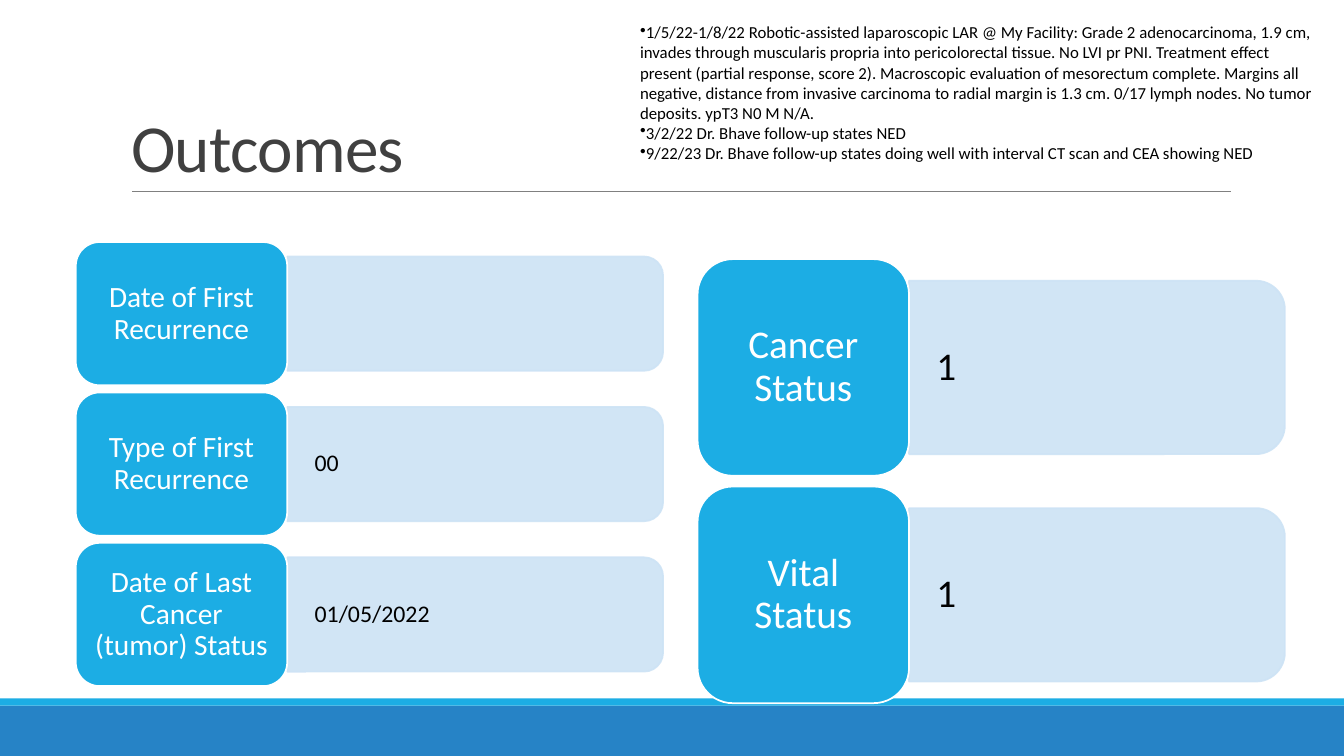
"""Builds the Outcomes slide with recurrence and status cards."""
import lxml.etree
import pptx
import pptx.dml.color
import pptx.enum.shapes
import pptx.enum.text
import pptx.oxml.ns
import pptx.util

Cm = pptx.util.Cm
Pt = pptx.util.Pt
qn = pptx.oxml.ns.qn
SHAPE = pptx.enum.shapes.MSO_SHAPE
ALIGN = pptx.enum.text.PP_ALIGN
ANCHOR = pptx.enum.text.MSO_ANCHOR
AUTO_SIZE = pptx.enum.text.MSO_AUTO_SIZE


def color(hex_string):
    return pptx.dml.color.RGBColor.from_string(hex_string)


def write(para, text, size, ink, spacing=1.0, align=ALIGN.LEFT):
    para.alignment = align
    para.line_spacing = spacing
    span = para.add_run()
    span.text = text
    span.font.size = Pt(size)
    span.font.name = "Calibri"
    span.font.color.rgb = color(ink)
    return span


deck = pptx.Presentation()
deck.slide_width = Cm(33.87)
deck.slide_height = Cm(19.05)
page = deck.slides.add_slide(deck.slide_layouts[5])

for top, height, fill in [(17.78, 1.27, "2683C6"), (17.6, 0.18, "1CADE4")]:
    band = page.shapes.add_shape(SHAPE.RECTANGLE, 0, Cm(top), deck.slide_width, Cm(height))
    band.shadow.inherit = False
    band.fill.solid()
    band.fill.fore_color.rgb = color(fill)
    band.line.fill.background()

rule = page.shapes.add_connector(
    pptx.enum.shapes.MSO_CONNECTOR.STRAIGHT, Cm(3.33), Cm(4.83), Cm(31.01), Cm(4.83))
rule.line.color.rgb = color("808080")
rule.line.width = Pt(0.5)
lxml.etree.SubElement(rule._element.spPr, qn("a:effectLst"))

title = page.shapes.title
title.left, title.top, title.width, title.height = Cm(3.05), Cm(0.79), Cm(27.94), Cm(4.03)
title.text_frame.auto_size = AUTO_SIZE.NONE
title.text_frame.vertical_anchor = ANCHOR.BOTTOM
heading = write(title.text_frame.paragraphs[0], "Outcomes", 48, "404040", 0.85)
heading.font._element.set("spc", "-50")

label_width, bar_length = 5.33, 9.47
columns = [
    {"left": 1.91, "top": 6.1, "height": 3.61, "pitch": 3.79, "bar": 2.88,
     "label_size": 21, "value_size": 17, "inset": 0.22,
     "cards": [("Date of First Recurrence", ""),
               ("Type of First Recurrence", "00"),
               ("Date of Last Cancer (tumor) Status", "01/05/2022")]},
    {"left": 17.58, "top": 6.53, "height": 5.46, "pitch": 5.73, "bar": 4.37,
     "label_size": 28, "value_size": 28, "inset": 0.3,
     "cards": [("Cancer Status", "1"), ("Vital Status", "1")]},
]
for column in columns:
    bar_left = column["left"] + label_width
    thickness = column["bar"]
    for row, (caption, value) in enumerate(column["cards"]):
        top = column["top"] + row * column["pitch"]
        middle = top + column["height"] / 2

        bar = page.shapes.add_shape(
            SHAPE.ROUND_2_SAME_RECTANGLE,
            Cm(bar_left + (bar_length - thickness) / 2), Cm(middle - bar_length / 2),
            Cm(thickness), Cm(bar_length))
        bar.rotation = 90
        bar.shadow.inherit = False
        bar.fill.solid()
        bar.fill.fore_color.rgb = color("CDE3F5")
        bar.line.color.rgb = color("CDE3F5")
        bar.line.width = Pt(1.25)
        for tint in bar._element.spPr.iter(qn("a:srgbClr")):
            lxml.etree.SubElement(tint, qn("a:alpha"), val="90000")

        if value:
            box = page.shapes.add_textbox(
                Cm(bar_left), Cm(middle - thickness / 2), Cm(bar_length), Cm(thickness))
            frame = box.text_frame
            frame.word_wrap = True
            frame.vertical_anchor = ANCHOR.MIDDLE
            frame.margin_left = frame.margin_right = Cm(0.69)
            write(frame.paragraphs[0], value, column["value_size"], "000000", 0.9)

        label = page.shapes.add_shape(
            SHAPE.ROUNDED_RECTANGLE, Cm(column["left"]), Cm(top),
            Cm(label_width), Cm(column["height"]))
        label.shadow.inherit = False
        label.fill.solid()
        label.fill.fore_color.rgb = color("1CADE4")
        label.line.color.rgb = color("FFFFFF")
        label.line.width = Pt(1.25)
        frame = label.text_frame
        frame.word_wrap = True
        frame.vertical_anchor = ANCHOR.MIDDLE
        frame.margin_left = frame.margin_right = Cm(column["inset"])
        frame.margin_top = frame.margin_bottom = Cm(column["inset"] / 2)
        write(frame.paragraphs[0], caption, column["label_size"], "FFFFFF", 0.9, ALIGN.CENTER)

notes = [
    "1/5/22-1/8/22 Robotic-assisted laparoscopic LAR @ My Facility: Grade 2 adenocarcinoma, "
    "1.9 cm, invades through muscularis propria into pericolorectal tissue. No LVI pr PNI. "
    "Treatment effect present (partial response, score 2). Macroscopic evaluation of "
    "mesorectum complete. Margins all negative, distance from invasive carcinoma to radial "
    "margin is 1.3 cm. 0/17 lymph nodes. No tumor deposits. ypT3 N0 M N/A.",
    "3/2/22 Dr. Bhave follow-up states NED",
    "9/22/23 Dr. Bhave follow-up states doing well with interval CT scan and CEA showing NED",
]
history = page.shapes.add_textbox(Cm(15.88), Cm(0.43), Cm(17.58), Cm(3.84))
history.text_frame.word_wrap = True
history.text_frame.auto_size = AUTO_SIZE.SHAPE_TO_FIT_TEXT
for index, note in enumerate(notes):
    para = history.text_frame.add_paragraph() if index else history.text_frame.paragraphs[0]
    write(para, note, 12, "000000")
    lxml.etree.SubElement(para._p.get_or_add_pPr(), qn("a:buChar"), char="•")

deck.save("out.pptx")
